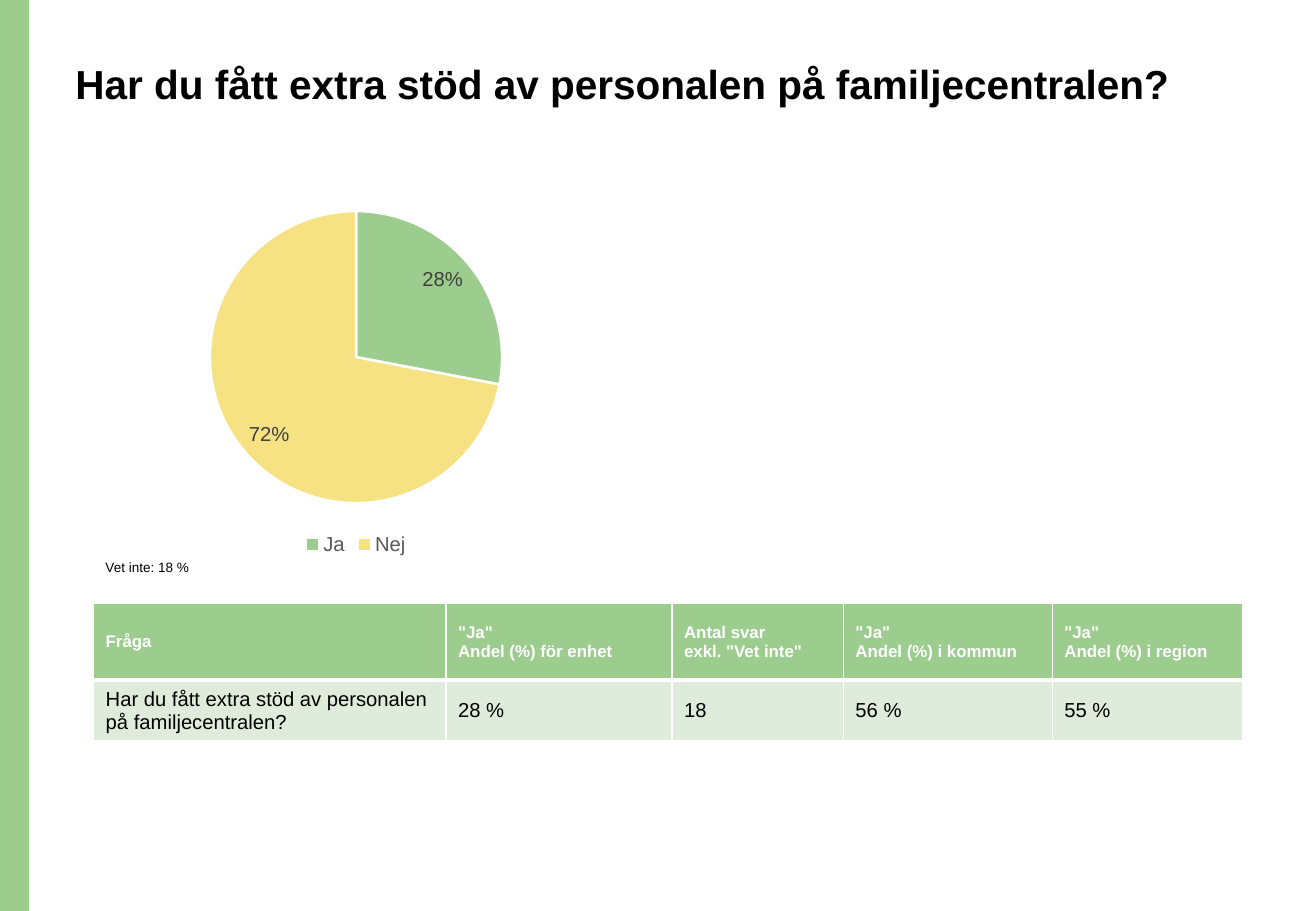
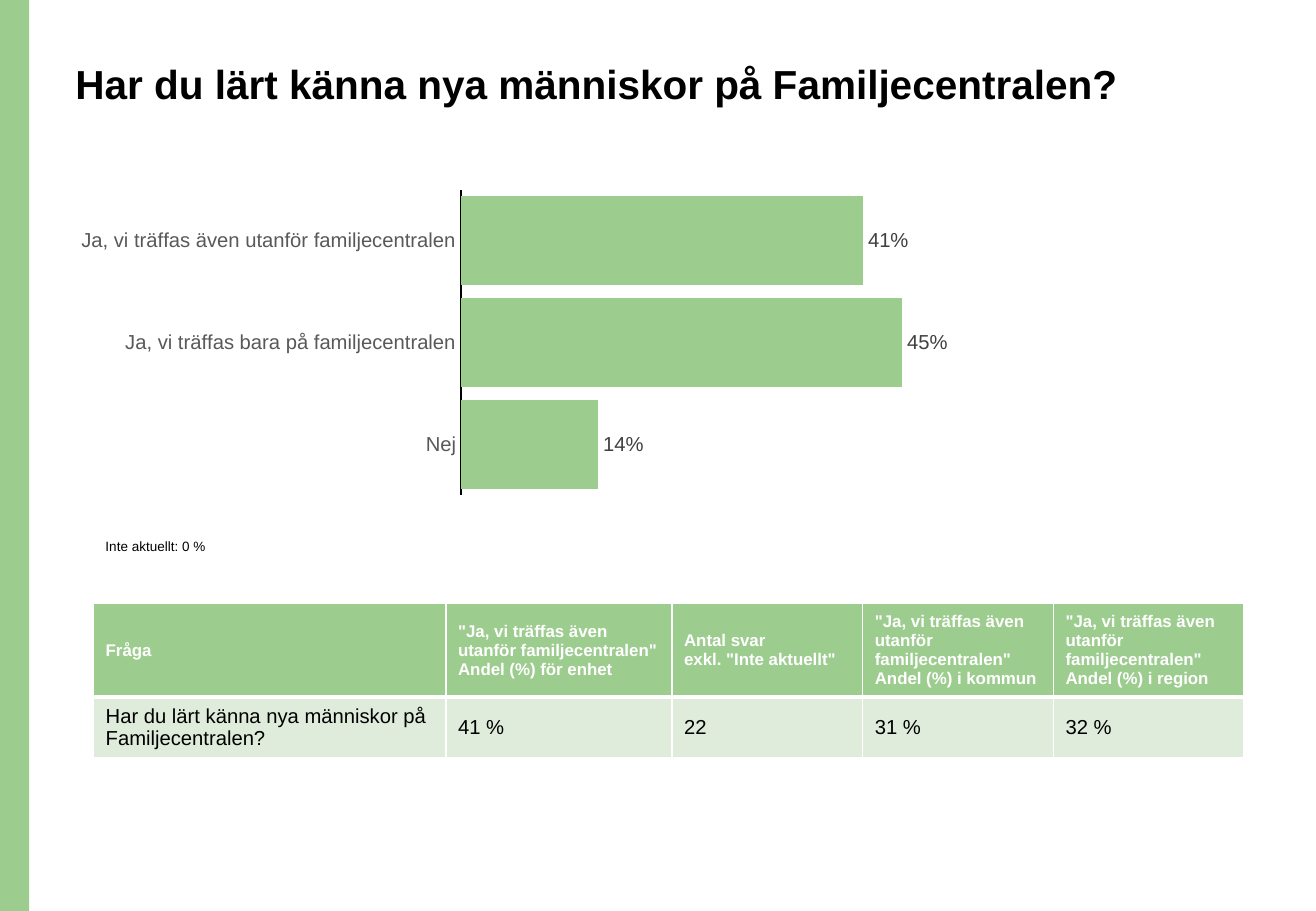
"""Build two survey result slides, each with a chart, a note and a table."""
import pptx
import pptx.chart.data
import pptx.dml.color
import pptx.enum.chart
import pptx.enum.shapes
import pptx.enum.text
import pptx.oxml
import pptx.oxml.ns
import pptx.util
from pptx.util import Inches

GREEN, YELLOW, PALE = "9DCC8F", "F6E183", "DFECDB"
WHITE, BLACK, GREY, DARK = "FFFFFF", "000000", "595959", "404040"
EDGES = ("lnL", "lnR", "lnT", "lnB")
XL = pptx.enum.chart


def rgb(value):
    return pptx.dml.color.RGBColor.from_string(value)


def style(font, size, color, bold=False):
    font.name = "Arial"
    font.size = pptx.util.Pt(size)
    font.bold = bold
    font.color.rgb = rgb(color)


friends = "\"Ja, vi träffas även utanför familjecentralen\""
questions = [
    {
        "title": "Har du fått extra stöd av personalen på familjecentralen?",
        "kind": XL.XL_CHART_TYPE.PIE,
        "chart_box": (1.22, 1.6, 3.42, 3.01),
        "shares": {"Ja": 0.28, "Nej": 0.72},
        "format": "[<0.01]\"\";[>0.01]0%",
        "label_position": XL.XL_LABEL_POSITION.INSIDE_END,
        "note": "Vet inte: 18 %",
        "note_box": (0.77, 4.49, 2.1, 0.48),
        "answer": "\"Ja\"",
        "excluded": "exkl. \"Vet inte\"",
        "figures": ["28 %", "18", "56 %", "55 %"],
        "columns": [2.9, 1.86, 1.41, 1.72, 1.57],
    },
    {
        "title": "Har du lärt känna nya människor på Familjecentralen?",
        "kind": XL.XL_CHART_TYPE.BAR_CLUSTERED,
        "chart_box": (0.52, 1.51, 7.46, 2.62),
        "shares": {
            "Ja, vi träffas även utanför familjecentralen": 0.41,
            "Ja, vi träffas bara på familjecentralen": 0.45,
            "Nej": 0.14,
        },
        "format": "0%",
        "label_position": XL.XL_LABEL_POSITION.OUTSIDE_END,
        "note": "Inte aktuellt: 0 %",
        "note_box": (0.77, 4.31, 2.1, 0.28),
        "answer": friends,
        "excluded": "exkl. \"Inte aktuellt\"",
        "figures": ["41 %", "22", "31 %", "32 %"],
        "columns": [2.9, 1.86, 1.57, 1.57, 1.57],
    },
]

prs = pptx.Presentation()
prs.slide_width, prs.slide_height = Inches(10.83), Inches(7.5)
layout = prs.slide_layouts[5]
for holder in list(layout.placeholders):
    if holder.placeholder_format.idx >= 10:
        holder.element.getparent().remove(holder.element)
heading = layout.placeholders[0]
heading.left, heading.top = Inches(0.52), Inches(0.48)
heading.width, heading.height = Inches(9.34), Inches(1.02)
heading.text_frame.vertical_anchor = pptx.enum.text.MSO_ANCHOR.TOP
heading.text_frame.auto_size = pptx.enum.text.MSO_AUTO_SIZE.NONE

slides = [prs.slides.add_slide(layout) for question in questions]
band = slides[0].shapes.add_shape(
    pptx.enum.shapes.MSO_SHAPE.RECTANGLE, 0, 0, Inches(0.24), prs.slide_height)
band.fill.solid()
band.fill.fore_color.rgb = rgb(GREEN)
band.line.fill.background()
band.shadow.inherit = False
layout.shapes.element.insert(2, band.element)

for slide, question in zip(slides, questions):
    title = slide.shapes.title.text_frame.paragraphs[0]
    title.alignment = pptx.enum.text.PP_ALIGN.LEFT
    title.line_spacing = 0.9
    run = title.add_run()
    run.text = question["title"]
    style(run.font, 24, BLACK, True)

    shares = pptx.chart.data.CategoryChartData(number_format="0%")
    shares.categories = list(question["shares"])
    shares.add_series("Series 1", list(question["shares"].values()))
    chart = slide.shapes.add_chart(
        question["kind"], *map(Inches, question["chart_box"]), shares).chart
    style(chart.font, 10, BLACK)
    chart.has_title = False
    plot = chart.plots[0]
    series = plot.series[0]
    plot.has_data_labels = True
    labels = plot.data_labels
    labels.show_value = True
    labels.number_format = question["format"]
    labels.number_format_is_linked = False
    labels.position = question["label_position"]
    style(labels.font, 12, DARK)

    if question["kind"] == XL.XL_CHART_TYPE.PIE:
        plot.vary_by_categories = True
        for index, color in enumerate((GREEN, YELLOW)):
            slice_format = series.points[index].format
            slice_format.fill.solid()
            slice_format.fill.fore_color.rgb = rgb(color)
            slice_format.line.color.rgb = rgb(WHITE)
            slice_format.line.width = pptx.util.Pt(1.5)
        chart.has_legend = True
        chart.legend.position = XL.XL_LEGEND_POSITION.BOTTOM
        chart.legend.include_in_layout = False
        style(chart.legend.font, 12, GREY)
    else:
        plot.vary_by_categories = False
        plot.gap_width = 15
        series.format.fill.solid()
        series.format.fill.fore_color.rgb = rgb(GREEN)
        chart.has_legend = False
        answers = chart.category_axis
        answers.reverse_order = True
        answers.major_tick_mark = XL.XL_TICK_MARK.NONE
        answers.format.line.color.rgb = rgb(BLACK)
        answers.format.line.width = pptx.util.Pt(0.75)
        style(answers.tick_labels.font, 12, GREY)
        chart.value_axis.visible = False
        chart.value_axis.has_major_gridlines = False
        chart.value_axis.minimum_scale = 0
        chart.value_axis.maximum_scale = 0.5

    note = slide.shapes.add_textbox(*map(Inches, question["note_box"])).text_frame
    note.word_wrap = True
    note.paragraphs[0].line_spacing = 1.5
    run = note.paragraphs[0].add_run()
    run.text = question["note"]
    style(run.font, 8, BLACK)

    answer = question["answer"]
    rows = [
        [["Fråga"], [answer, "Andel (%) för enhet"],
         ["Antal svar", question["excluded"]],
         [answer, "Andel (%) i kommun"], [answer, "Andel (%) i region"]],
        [[question["title"]]] + [[figure] for figure in question["figures"]],
    ]
    table = slide.shapes.add_table(
        2, 5, Inches(0.77), Inches(4.97), Inches(9.46), Inches(0.86)).table
    table.horz_banding = False
    for column, width in zip(table.columns, question["columns"]):
        column.width = Inches(width)
    row_looks = [(0.63, GREEN, 10, WHITE, True, "lnB"),
                 (0.23, PALE, 12, BLACK, False, "lnT")]
    for r, (height, fill, size, color, bold, thick) in enumerate(row_looks):
        table.rows[r].height = Inches(height)
        for c, lines in enumerate(rows[r]):
            cell = table.cell(r, c)
            cell.vertical_anchor = pptx.enum.text.MSO_ANCHOR.MIDDLE
            for index, line in enumerate(lines):
                frame = cell.text_frame
                paragraph = frame.add_paragraph() if index else frame.paragraphs[0]
                run = paragraph.add_run()
                run.text = line
                style(run.font, size, color, bold)
            properties = cell._tc.get_or_add_tcPr()
            for edge in EDGES:
                points = 3 if edge == thick else 1
                properties.append(pptx.oxml.parse_xml(
                    f'<a:{edge} {pptx.oxml.ns.nsdecls("a")} w="{pptx.util.Pt(points)}">'
                    f'<a:solidFill><a:srgbClr val="{WHITE}"/></a:solidFill></a:{edge}>'))
            cell.fill.solid()
            cell.fill.fore_color.rgb = rgb(fill)

prs.save("out.pptx")
